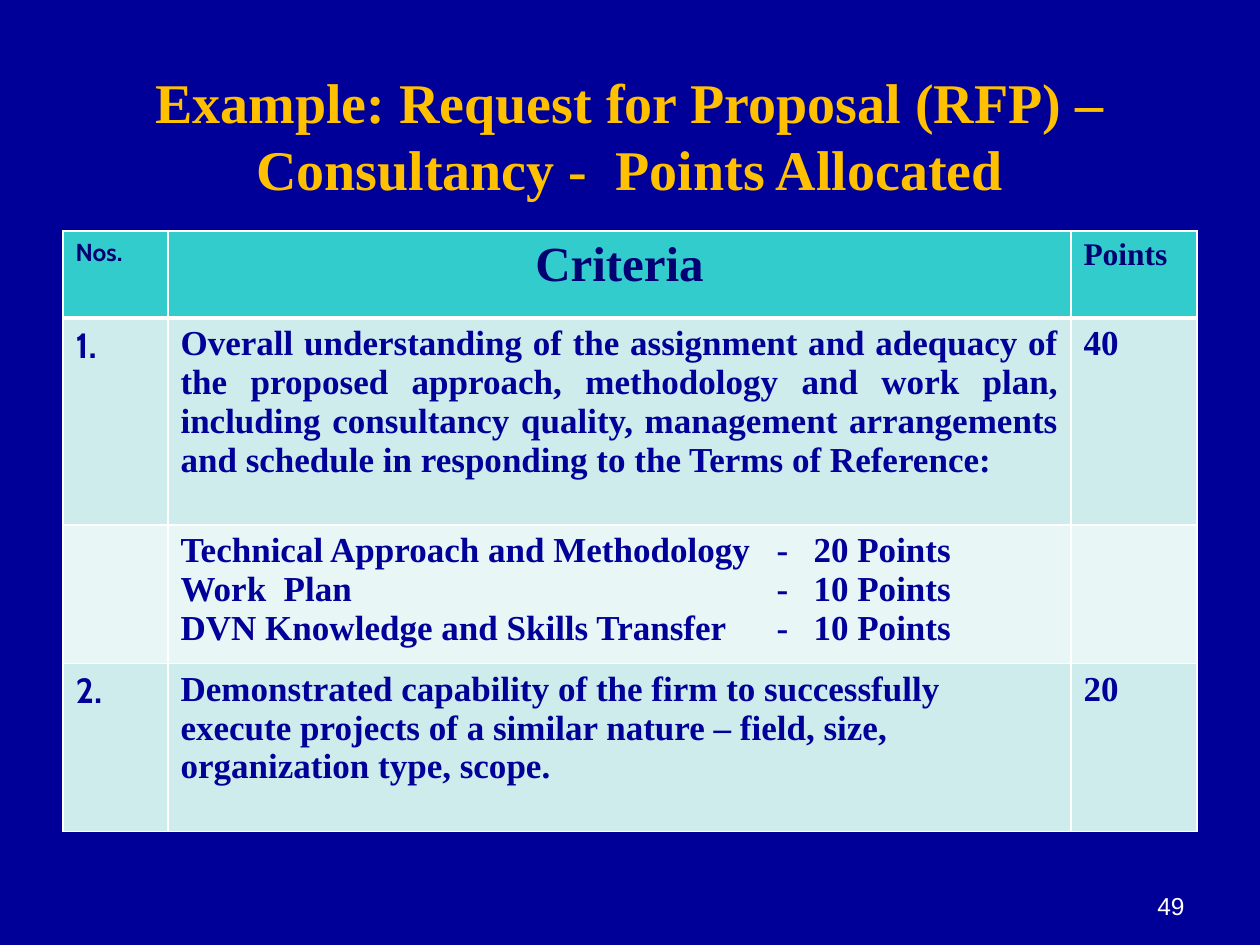
from lxml import etree
from pptx import Presentation, util as u
from pptx.dml.color import RGBColor
from pptx.enum import text
from pptx.oxml.ns import qn

PX = 914400 / 126
SERIF, SANS = "Times New Roman", "Cabin"
HEADER_INK, BODY_INK = "010173", "010199"
LEFT, CENTER, RIGHT, JUSTIFY = (text.PP_ALIGN.LEFT, text.PP_ALIGN.CENTER,
                                text.PP_ALIGN.RIGHT, text.PP_ALIGN.JUSTIFY)

COLUMN_WIDTHS = [105, 903, 126]
ROW_HEIGHTS = [87, 207, 102, 168]
ROW_FILLS = ["33CCCC", "CEECEC", "E8F6F6", "CEECEC"]
SCORE_TABS = [596, 633]
HEADER = [("Nos.", dict(size=14, font=SANS)),
          ("Criteria", dict(size=28, align=CENTER)),
          ("Points", dict(size=18))]
CRITERIA = [
    [("1.", dict(font=SANS, align=JUSTIFY)),
     ("Overall understanding of the assignment and adequacy of the proposed "
      "approach, methodology and work plan, including consultancy quality, "
      "management arrangements and schedule in responding to the Terms of "
      "Reference:", dict(align=JUSTIFY)),
     ("40", {})],
    [("", {}),
     ("Technical Approach and Methodology\t-\t20 Points\n"
      "Work  Plan\t-\t10 Points\n"
      "DVN Knowledge and Skills Transfer\t-\t10 Points", dict(tabs=SCORE_TABS)),
     ("", {})],
    [("2.", dict(font=SANS)),
     ("Demonstrated capability of the firm to successfully execute projects of "
      "a similar nature – field, size, organization type, scope.", {}),
     ("20", {})],
]


def emu(px):
    return u.Emu(round(px * PX))


def color(hex_value):
    return RGBColor.from_string(hex_value)


def write(frame, content, size=20, font=SERIF, ink=BODY_INK, bold=True,
          align=LEFT, tabs=()):
    """Fill a text frame, one paragraph for each line of content."""
    for index, line in enumerate(content.split("\n")):
        paragraph = frame.add_paragraph() if index else frame.paragraphs[0]
        paragraph.alignment = align
        if tabs:
            properties = paragraph._p.get_or_add_pPr()
            tab_list = etree.SubElement(properties, qn("a:tabLst"))
            for position in tabs:
                etree.SubElement(tab_list, qn("a:tab"), pos=str(emu(position)), algn="l")
        run = paragraph.add_run()
        run.text = line
        run.font.size = u.Pt(size)
        run.font.name = font
        run.font.bold = bold
        run.font.color.rgb = color(ink)


def add_label(slide, box, content, anchor, **style):
    frame = slide.shapes.add_textbox(*map(emu, box)).text_frame
    frame.word_wrap = True
    frame.vertical_anchor = anchor
    write(frame, content, **style)


def set_borders(cell, **widths):
    """Draw white borders; the sides L, R, T and B take widths in points."""
    properties = cell._tc.get_or_add_tcPr()
    for index, side in enumerate("LRTB"):
        line = etree.Element(qn(f"a:ln{side}"), w=str(u.Pt(widths.get(side, 1))))
        fill = etree.SubElement(line, qn("a:solidFill"))
        etree.SubElement(fill, qn("a:srgbClr"), val="FFFFFF")
        properties.insert(index, line)


def add_criteria_table(slide, left, top):
    rows = [HEADER] + CRITERIA
    box = (left, top, sum(COLUMN_WIDTHS), sum(ROW_HEIGHTS))
    table = slide.shapes.add_table(len(rows), len(COLUMN_WIDTHS), *map(emu, box)).table
    for column, width in zip(table.columns, COLUMN_WIDTHS):
        column.width = emu(width)
    for index, (row, height, fill) in enumerate(zip(rows, ROW_HEIGHTS, ROW_FILLS)):
        table.rows[index].height = emu(height)
        ink = BODY_INK if index else HEADER_INK
        for cell, (content, style) in zip(table.rows[index].cells, row):
            cell.fill.solid()
            cell.fill.fore_color.rgb = color(fill)
            set_borders(cell, T=3 if index == 1 else 1, B=1 if index else 3)
            if content:
                write(cell.text_frame, content, ink=ink, **style)


def main():
    presentation = Presentation()
    presentation.slide_width, presentation.slide_height = emu(1260), emu(945)
    slide = presentation.slides.add_slide(presentation.slide_layouts[6])
    slide.background.fill.solid()
    slide.background.fill.fore_color.rgb = color("000099")

    add_label(slide, (63, 40, 1134, 190),
              "Example: Request for Proposal (RFP) – Consultancy -  Points Allocated",
              text.MSO_ANCHOR.MIDDLE, size=32, ink="FFC000", align=CENTER)
    add_criteria_table(slide, 63, 231)
    add_label(slide, (903, 861, 294, 66), "49", text.MSO_ANCHOR.BOTTOM,
              size=14, font="Arial", ink="FFFFFF", bold=False, align=RIGHT)
    presentation.save("out.pptx")


if __name__ == "__main__":
    main()
